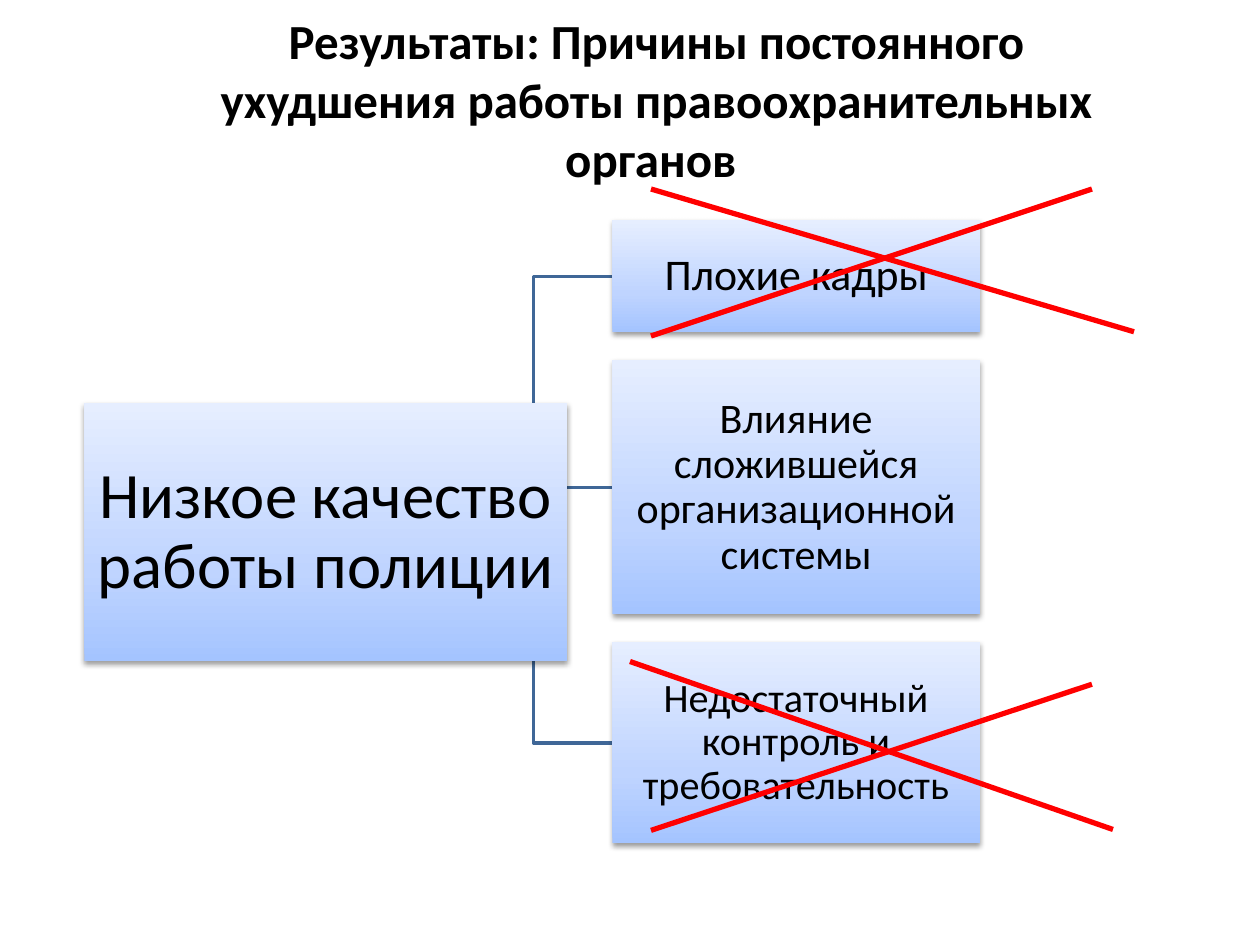
"""Build the slide on why police work keeps getting worse."""
from copy import deepcopy

from lxml.etree import SubElement
from pptx import Presentation
from pptx.dml.color import RGBColor as RGB
from pptx.enum.shapes import MSO_CONNECTOR as LINK, MSO_SHAPE as SHAPE
from pptx.enum.text import MSO_ANCHOR as ANCHOR, PP_ALIGN as ALIGN
from pptx.oxml.ns import qn
from pptx.util import Pt

TITLE = "Результаты: Причины постоянного ухудшения работы правоохранительных органов "
ROOT = ("Низкое качество работы полиции", 37)
CAUSES = [
    ("Плохие кадры", 25, 64),
    ("Влияние сложившейся организационной системы", 24, 145),
    ("Недостаточный контроль и требовательность", 23, 115),
]
STRIKES = [
    (372, 108, 648, 189.6),
    (360, 378, 636, 474),
    (372, 192, 624, 108),
    (372, 474.5, 624, 391),
]
COLORS = {"text": "000000", "branch": "3F6797", "strike": "FF0000", "shade": "000000"}
STOPS = [(0, "A4C4FF"), (0.35, "BFD4FF"), (1, "E6EEFF")]
FONT = "Calibri"
ROOT_BOX = (48.2, 230.6, 275.8, 147.4)
LEFT, TOP, WIDTH, GAP = 350, 126, 210, 16
BEND = 304.8


def color(name):
    return RGB.from_string(COLORS[name])


def write(shape, text, size, bold=False):
    frame = shape.text_frame
    frame.word_wrap = True
    frame.vertical_anchor = ANCHOR.MIDDLE
    frame.text = text
    para = frame.paragraphs[0]
    para.alignment = ALIGN.CENTER
    font = para.runs[0].font
    font.name, font.size, font.bold = FONT, Pt(size), bold
    font.color.rgb = color("text")
    return frame


def shade(shape):
    shape.shadow.inherit = False
    effects = shape._element.spPr.find(qn("a:effectLst"))
    outer = SubElement(effects, qn("a:outerShdw"), blurRad=str(Pt(3.1)),
                       dist=str(Pt(1.6)), dir="5400000", rotWithShape="0")
    tint = SubElement(outer, qn("a:srgbClr"), val=COLORS["shade"])
    SubElement(tint, qn("a:alpha"), val="38000")


def blend(shape):
    fill = shape.fill
    fill.gradient()
    fill.gradient_angle = 90
    stops = shape._element.spPr.find(qn("a:gradFill")).find(qn("a:gsLst"))
    stops.append(deepcopy(stops[0]))
    for stop, (place, tone) in zip(fill.gradient_stops, STOPS):
        stop.position = place
        stop.color.rgb = RGB.from_string(tone)


def add_box(shapes, box, text, size, inset):
    shape = shapes.add_shape(SHAPE.RECTANGLE, *map(Pt, box))
    blend(shape)
    shape.line.fill.background()
    shade(shape)
    frame = write(shape, text, size)
    frame.margin_left = frame.margin_right = Pt(inset)
    frame.margin_top = frame.margin_bottom = Pt(inset)
    frame.paragraphs[0].line_spacing = 0.9


def add_branch(shapes, start, end):
    points = [(BEND, start[1]), (BEND, end[1]), end]
    build = shapes.build_freeform(*map(Pt, start))
    build.add_line_segments([tuple(map(Pt, point)) for point in points], close=False)
    branch = build.convert_to_shape()
    branch.fill.background()
    branch.line.color.rgb = color("branch")
    branch.line.width = Pt(2)
    branch.shadow.inherit = False


def add_strike(shapes, ends):
    strike = shapes.add_connector(LINK.STRAIGHT, *map(Pt, ends))
    strike.line.color.rgb = color("strike")
    strike.line.width = Pt(3)
    SubElement(strike._element.spPr, qn("a:effectLst"))


def main():
    deck = Presentation()
    deck.slide_width, deck.slide_height = Pt(720), Pt(540)
    shapes = deck.slides.add_slide(deck.slide_layouts[6]).shapes

    boxes, top = [], TOP
    for _, _, height in CAUSES:
        boxes.append((LEFT, top, WIDTH, height))
        top += height + GAP

    left, top, width, height = ROOT_BOX
    start = (left + width - GAP * 4, top + height / 2)
    for x, y, _, tall in reversed(boxes):
        add_branch(shapes, start, (x, y + tall / 2))

    add_box(shapes, ROOT_BOX, *ROOT, 2)
    for box, (text, size, _) in zip(boxes, CAUSES):
        add_box(shapes, box, text, size, 1.5)

    title = shapes.add_textbox(Pt(114), Pt(2), Pt(522), Pt(109))
    write(title, TITLE, 28, bold=True)
    for ends in STRIKES:
        add_strike(shapes, ends)
    deck.save("out.pptx")


if __name__ == "__main__":
    main()
